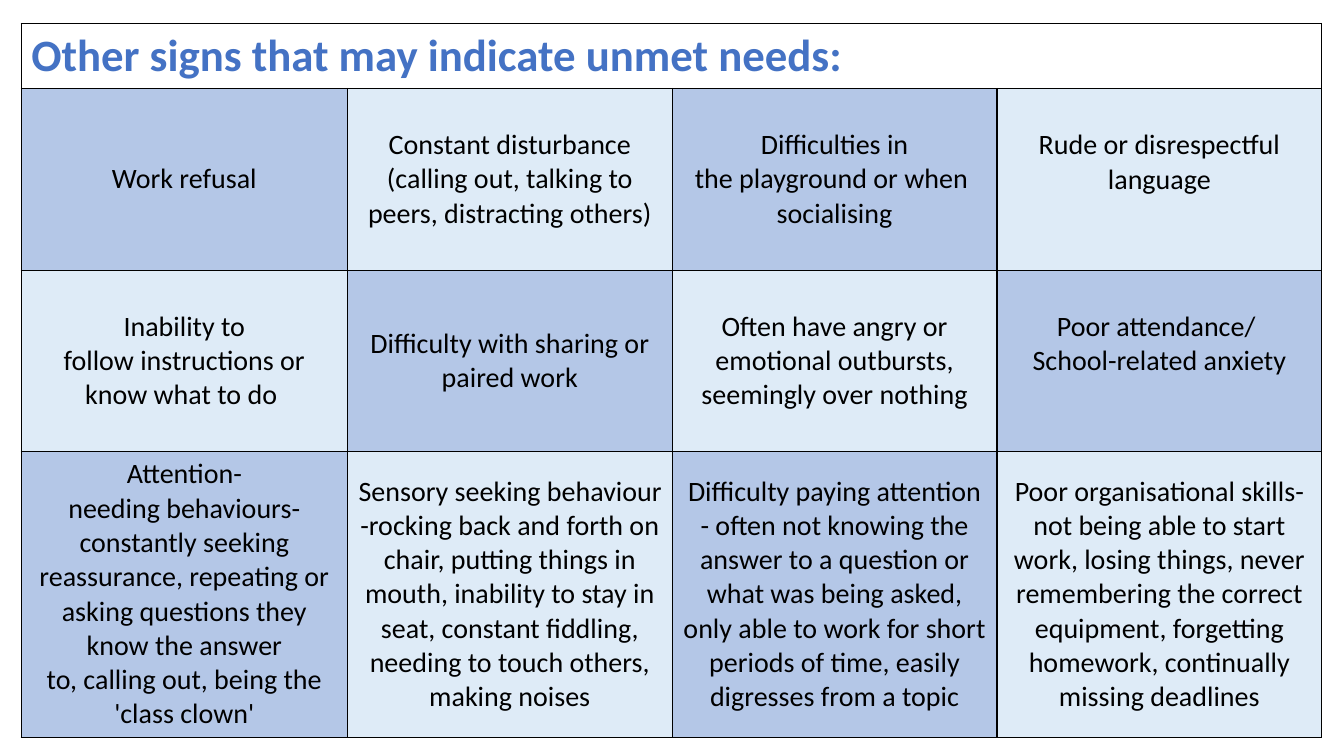
"""Build a slide with a table of signs that may indicate unmet needs."""
from dataclasses import dataclass

import pptx
import pptx.dml.color
import pptx.enum.text
import pptx.oxml
import pptx.oxml.ns
import pptx.table
import pptx.util

Pt = pptx.util.Pt
RGBColor = pptx.dml.color.RGBColor

BLACK = RGBColor(0x00, 0x00, 0x00)
HEADING_BLUE = RGBColor(0x44, 0x72, 0xC4)
MID_BLUE = RGBColor(0xB4, 0xC7, 0xE7)
PALE_BLUE = RGBColor(0xDE, 0xEB, 0xF7)

FONT = "Calibri"
LEFT, TOP = 15.2, 16.8
COLUMN_WIDTHS = (233, 232, 232, 232)
HEADING_HEIGHT = 46
ROW_HEIGHTS = (130, 129.4, 204)
CELL_MARGIN = 3.6
LINE_HEIGHT = 24.4
TIE = "~"
HARD_SPACE = chr(160)
HEADING = "Other signs that may indicate unmet needs:~"


@dataclass(frozen=True)
class Sign:
    """The paragraphs of one cell, with ties, and whether they sit above the middle."""

    paragraphs: tuple[str, ...]
    raised: bool = False


SIGNS = (
    (
        Sign(("Work refusal",)),
        Sign(("Constant disturbance (calling out, talking to peers, distracting others)",)),
        Sign(("Difficulties in the~playground~or~when~", "socialising")),
        Sign(("Rude or disrespectful language",), raised=True),
    ),
    (
        Sign(("Inability to follow~instructions or know what to~do~",)),
        Sign(("Difficulty with sharing or paired work",)),
        Sign(("Often have angry or emotional outbursts, seemingly over nothing",)),
        Sign(("Poor attendance/~", "School-related anxiety"), raised=True),
    ),
    (
        Sign(("Attention-needing~behaviours-constantly seeking reassurance,~repeating or "
              "asking~questions they know the~answer to,~calling out, being~the "
              "'class clown'",)),
        Sign(("Sensory~seeking~behaviour-rocking~back and forth on chair,~putting things in "
              "mouth,~inability to stay in seat,~constant~fiddling, needing to~touch others, "
              "making noises",)),
        Sign(("Difficulty paying attention - often not knowing the answer to a~question or "
              "what was being asked, only able to work for short periods of time, easily "
              "digresses from a topic",)),
        Sign(("Poor~organisational~skills-not being able to start work, losing things, never "
              "remembering the correct equipment, forgetting homework,~continually "
              "missing deadlines",)),
    ),
)


def add_borders(cell: pptx.table._Cell) -> None:
    """Draw a thin black line on all four sides of a cell."""
    properties = cell._tc.get_or_add_tcPr()
    for side in ("lnL", "lnR", "lnT", "lnB"):
        properties.append(pptx.oxml.parse_xml(
            f'<a:{side} {pptx.oxml.ns.nsdecls("a")} w="{Pt(1)}"><a:solidFill>'
            f'<a:srgbClr val="{BLACK}"/></a:solidFill></a:{side}>'
        ))


def write_text(para, text: str, size: float, color: RGBColor, bold: bool) -> None:
    """Write a paragraph, turning ties into hard spaces, and set its font."""
    para.text = text.replace(TIE, HARD_SPACE)
    para.font.name = FONT
    para.font.size = Pt(size)
    para.font.bold = bold
    para.font.color.rgb = color


def fill_sign(cell: pptx.table._Cell, sign: Sign, color: RGBColor) -> None:
    """Write one sign into its coloured cell."""
    cell.fill.solid()
    cell.fill.fore_color.rgb = color
    cell.vertical_anchor = pptx.enum.text.MSO_ANCHOR.MIDDLE
    if sign.raised:
        cell.margin_bottom = Pt(CELL_MARGIN + LINE_HEIGHT)
    frame = cell.text_frame
    for index, text in enumerate(sign.paragraphs):
        para = frame.add_paragraph() if index else frame.paragraphs[0]
        para.alignment = pptx.enum.text.PP_ALIGN.CENTER
        write_text(para, text, 20, BLACK, False)


def main() -> None:
    """Create the deck and save it."""
    deck = pptx.Presentation()
    deck.slide_width, deck.slide_height = Pt(960), Pt(540)
    page = deck.slides.add_slide(deck.slide_layouts[6])

    heights = (HEADING_HEIGHT, *ROW_HEIGHTS)
    table = page.shapes.add_table(
        len(heights), len(COLUMN_WIDTHS), Pt(LEFT), Pt(TOP),
        Pt(sum(COLUMN_WIDTHS)), Pt(sum(heights)),
    ).table
    table.first_row = table.horz_banding = False
    for column, width in zip(table.columns, COLUMN_WIDTHS):
        column.width = Pt(width)
    for row, height in zip(table.rows, heights):
        row.height = Pt(height)
    for cell in table.iter_cells():
        add_borders(cell)
        cell.fill.background()

    heading = table.cell(0, 0)
    heading.merge(table.cell(0, len(COLUMN_WIDTHS) - 1))
    write_text(heading.text_frame.paragraphs[0], HEADING, 32, HEADING_BLUE, True)
    for row_index, signs in enumerate(SIGNS):
        for column_index, sign in enumerate(signs):
            color = PALE_BLUE if (row_index + column_index) % 2 else MID_BLUE
            fill_sign(table.cell(row_index + 1, column_index), sign, color)

    deck.save("out.pptx")


if __name__ == "__main__":
    main()
